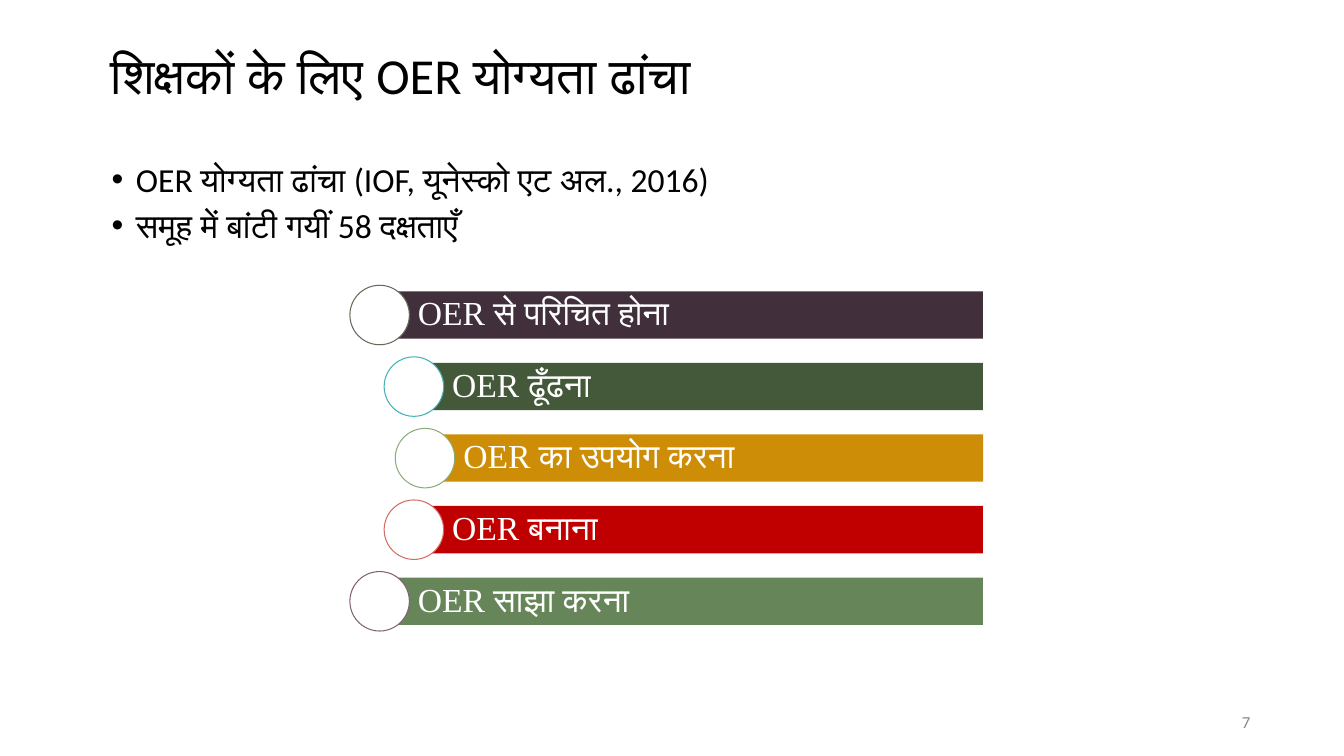
from lxml.etree import SubElement
from pptx import Presentation
from pptx.dml.color import RGBColor
from pptx.enum.shapes import MSO_SHAPE
from pptx.enum.text import MSO_ANCHOR, PP_ALIGN
from pptx.oxml.ns import qn
from pptx.util import Inches, Pt

BLACK = RGBColor(0x00, 0x00, 0x00)
WHITE = RGBColor(0xFF, 0xFF, 0xFF)
GREY = RGBColor(0x88, 0x88, 0x88)
PLUM = RGBColor(0x41, 0x30, 0x3B)
PINE = RGBColor(0x44, 0x59, 0x3A)
GOLD = RGBColor(0xCD, 0x8D, 0x06)
RED = RGBColor(0xC0, 0x00, 0x00)
SAGE = RGBColor(0x66, 0x85, 0x58)
OLIVE = RGBColor(0x64, 0x69, 0x59)
TEAL = RGBColor(0x45, 0xB1, 0xB5)
MINT = RGBColor(0x8C, 0xAA, 0x7C)
CORAL = RGBColor(0xD2, 0x6D, 0x66)
MAUVE = RGBColor(0x82, 0x60, 0x75)

POINTS = ["OER योग्यता ढांचा (IOF, यूनेस्को एट अल., 2016)", "समूह में बांटी गयीं 58 दक्षताएँ"]
SKILLS = [
    ("OER से परिचित होना", 0, PLUM, OLIVE),
    ("OER ढूँढना", 0.34, PINE, TEAL),
    ("OER का उपयोग करना", 0.45, GOLD, MINT),
    ("OER बनाना", 0.34, RED, CORAL),
    ("OER साझा करना", 0, SAGE, MAUVE),
]


def style(para, size, color, font="Calibri", align=PP_ALIGN.LEFT, spacing=0.9):
    """Set the font, alignment and line spacing of a paragraph."""
    para.font.size = Pt(size)
    para.font.name = font
    para.font.color.rgb = color
    para.alignment = align
    para.line_spacing = spacing


def add_text(slide, left, top, width, height, anchor=MSO_ANCHOR.MIDDLE):
    """Add a wrapping text box and return its frame."""
    box = slide.shapes.add_textbox(Inches(left), Inches(top), Inches(width), Inches(height))
    frame = box.text_frame
    frame.word_wrap = True
    frame.vertical_anchor = anchor
    return frame


def add_title(slide, left, top, width, height):
    """Write the slide heading."""
    para = add_text(slide, left, top, width, height).paragraphs[0]
    para.text = "शिक्षकों के लिए OER योग्यता ढांचा"
    style(para, 36, BLACK)


def add_points(slide, left, top, width, height):
    """Write the bulleted points."""
    frame = add_text(slide, left, top, width, height, MSO_ANCHOR.TOP)
    frame.text = "\n".join(POINTS)
    for index, para in enumerate(frame.paragraphs):
        style(para, 24, BLACK)
        para.space_before = Pt(7 if index else 0)
        props = para._p.get_or_add_pPr()
        props.set("marL", str(Inches(0.25)))
        props.set("indent", str(-Inches(0.24)))
        SubElement(props, qn("a:buFont"), typeface="Arial")
        SubElement(props, qn("a:buChar"), char="•")


def add_block(slide, kind, left, top, width, height, fill):
    """Add a flat filled shape."""
    shape = slide.shapes.add_shape(kind, Inches(left), Inches(top), Inches(width), Inches(height))
    shape.shadow.inherit = False
    shape.fill.solid()
    shape.fill.fore_color.rgb = fill
    return shape


def add_skills(slide, left, top, width, height):
    """Stack the skill bars along a curve, each led by a circle."""
    disc, thick = 0.59, 0.47
    step = (height - disc) / (len(SKILLS) - 1)
    for index, (label, shift, fill, edge) in enumerate(SKILLS):
        x, y = left + shift, top + index * step
        start = x + disc / 2
        bar = add_block(slide, MSO_SHAPE.RECTANGLE, start, y + (disc - thick) / 2,
                        left + width - start, thick, fill)
        bar.line.fill.background()
        frame = bar.text_frame
        frame.vertical_anchor = MSO_ANCHOR.MIDDLE
        frame.margin_left = Inches(0.38)
        frame.margin_right = frame.margin_top = frame.margin_bottom = Inches(0.07)
        frame.text = label
        style(frame.paragraphs[0], 24, WHITE, "Times New Roman")
        ring = add_block(slide, MSO_SHAPE.OVAL, x, y, disc, disc, WHITE)
        ring.line.color.rgb = edge
        ring.line.width = Pt(0.75)


def add_number(slide, left, top, width, height):
    """Write the slide number."""
    para = add_text(slide, left, top, width, height).paragraphs[0]
    para.text = "7"
    style(para, 12, GREY, align=PP_ALIGN.RIGHT, spacing=1.0)


def main():
    """Build and save the slide."""
    deck = Presentation()
    deck.slide_width, deck.slide_height = Inches(13.33), Inches(7.5)
    slide = deck.slides.add_slide(deck.slide_layouts[6])
    add_title(slide, 1, 0.28, 11.34, 0.99)
    add_points(slide, 1, 1.57, 11.21, 0.99)
    add_skills(slide, 3.47, 2.83, 6.28, 3.43)
    add_number(slide, 9.42, 6.97, 3.08, 0.38)
    deck.save("out.pptx")


if __name__ == "__main__":
    main()
